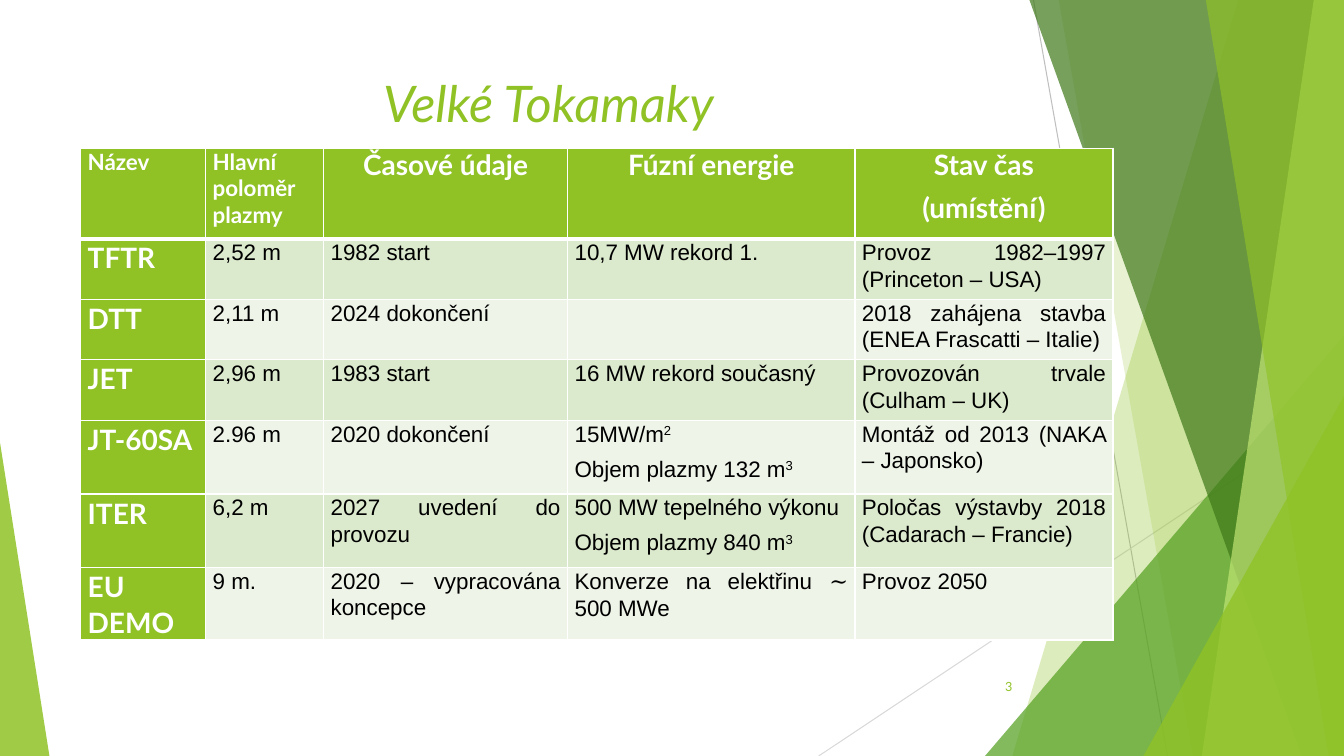
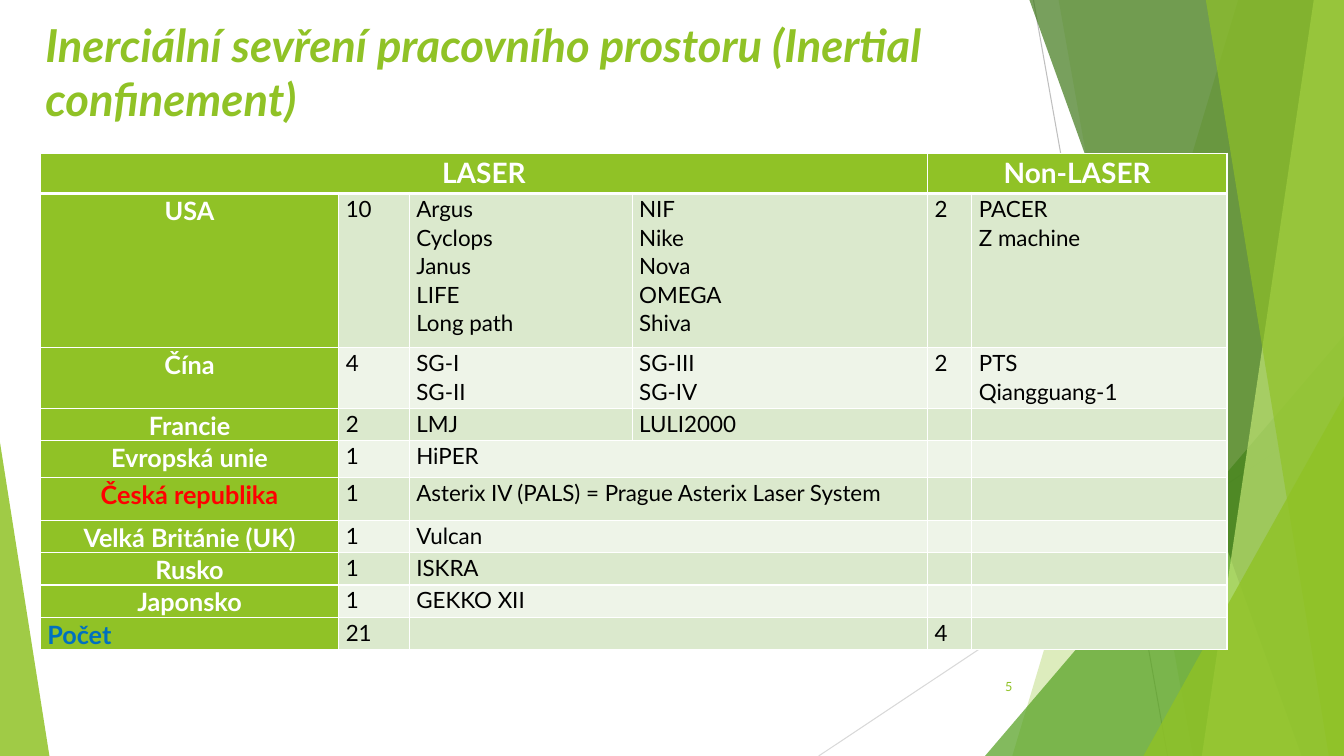
from dataclasses import dataclass

from lxml import etree
from pptx import Presentation
from pptx.dml.color import RGBColor
from pptx.enum.shapes import MSO_CONNECTOR, MSO_SHAPE
from pptx.enum.text import MSO_ANCHOR, MSO_AUTO_SIZE, PP_ALIGN
from pptx.oxml.ns import qn
from pptx.util import Inches, Pt

LEFT, CENTER, RIGHT, JUSTIFY = PP_ALIGN.LEFT, PP_ALIGN.CENTER, PP_ALIGN.RIGHT, PP_ALIGN.JUSTIFY
TOP, MIDDLE = MSO_ANCHOR.TOP, MSO_ANCHOR.MIDDLE
NO_AUTOFIT = MSO_AUTO_SIZE.NONE
STRAIGHT = MSO_CONNECTOR.STRAIGHT
TRIANGLE = MSO_SHAPE.ISOSCELES_TRIANGLE

COLORS = {
    "green": "90C226", "leaf": "54A021", "forest": "3F7819", "lime": "C0E474",
    "band_dark": "DBE9CD", "band_light": "EEF4E8", "white": "FFFFFF", "black": "000000",
    "red": "FF0000", "blue": "0070C0", "ray_dark": "BFBFBF", "ray_light": "D9D9D9",
}
HEADING_FONT, BODY_FONT, SYMBOL_FONT = "Lato", "Arial", "Cambria"
WIDTH, HEIGHT = 13.33, 7.5
TITLE_ONLY = 5

RAYS = [(10.25, 0, 11.58, HEIGHT, "ray_dark"), (WIDTH, 4.03, 8.12, HEIGHT, "ray_light")]
FACETS = [
    ("panel", "green", 30, (12.28, 10.04)),
    ("panel", "green", 20, (10.5, 11.83)),
    ("triangle", "leaf", 72, (9.77, 3.33, 3.56, 1)),
    ("panel", "forest", 70, (10.21, 12.91)),
    ("panel", "lime", 70, (13.03, 11.92)),
    ("panel", "green", 65, (11.96, 13.18)),
    ("triangle", "green", 80, (11.34, 3.93, 1.99, 1)),
    ("triangle", "green", 85, (0, 4.39, 0.49, 0)),
]

TOKAMAKS = [
    ["Název", "Hlavní poloměr plazmy", "Časové údaje", "Fúzní energie", "Stav čas\n(umístění)"],
    ["TFTR", "2,52 m", "1982 start", "10,7 MW rekord 1.", "Provoz 1982–1997 (Princeton – USA)"],
    ["DTT", "2,11 m", "2024 dokončení", "", "2018 zahájena stavba (ENEA Frascatti – Italie)"],
    ["JET", "2,96 m", "1983 start", "16 MW rekord současný", "Provozován trvale (Culham – UK)"],
    ["JT-60SA", "2.96 m", "2020 dokončení", "15MW/m^2\nObjem plazmy 132 m^3",
     "Montáž od 2013 (NAKA – Japonsko)"],
    ["ITER", "6,2 m", "2027 uvedení do provozu",
     "500 MW tepelného výkonu\nObjem plazmy 840 m^3", "Poločas výstavby 2018 (Cadarach – Francie)"],
    ["EU DEMO", "9 m.", "2020 – vypracována koncepce", "Konverze na elektřinu ∼ 500 MWe",
     "Provoz 2050"],
]
LASERS = [
    ["LASER", "", "", "", "Non-LASER", ""],
    ["USA", "10", "Argus\nCyclops\nJanus\nLIFE\nLong path", "NIF\nNike\nNova\nOMEGA\nShiva",
     "2", "PACER\nZ machine"],
    ["Čína", "4", "SG-I\nSG-II", "SG-III\nSG-IV", "2", "PTS\nQiangguang-1"],
    ["Francie", "2", "LMJ", "LULI2000", "", ""],
    ["Evropská unie", "1", "HiPER", "", "", ""],
    ["Česká republika", "1", "Asterix IV (PALS) = Prague Asterix Laser System", "", "", ""],
    ["Velká Británie (UK)", "1", "Vulcan", "", "", ""],
    ["Rusko", "1", "ISKRA", "", "", ""],
    ["Japonsko", "1", "GEKKO XII", "", "", ""],
    ["Počet", "21", "", "", "4", ""],
]
LASER_MERGES = [(0, 0, 3), (0, 4, 5)] + [(row, 2, 3) for row in range(4, len(LASERS))]
LABEL_COLORS = {"Česká republika": "red", "Počet": "blue"}


@dataclass
class CellStyle:
    """Text format of one table cell."""
    size: float = 16
    font: str = HEADING_FONT
    color: str = "black"
    bold: bool = False
    align: int = LEFT
    line_spacing: float = 1.07
    space_after: float = 0


def rgb(name):
    """Return the named colour."""
    return RGBColor.from_string(COLORS[name])


def format_run(run, size, font, color, bold=False, italic=False):
    """Set the character format of a run."""
    run.font.size = Pt(size)
    run.font.name = font
    run.font.color.rgb = rgb(color)
    run.font.bold = bold
    run.font.italic = italic


def add_ray(slide, x1, y1, x2, y2, color):
    """Draw a thin background line."""
    ray = slide.shapes.add_connector(STRAIGHT, Inches(x1), Inches(y1), Inches(x2), Inches(y2))
    ray.line.color.rgb = rgb(color)
    ray.line.width = Pt(0.75)
    etree.SubElement(ray._element.spPr, qn("a:effectLst"))


def add_panel(slide, top_x, bottom_x):
    """Draw a slanted panel reaching to the right edge."""
    builder = slide.shapes.build_freeform(Inches(top_x), 0)
    corners = [(WIDTH, 0), (WIDTH, HEIGHT), (bottom_x, HEIGHT)]
    builder.add_line_segments([(Inches(x), Inches(y)) for x, y in corners], close=True)
    return builder.convert_to_shape()


def add_corner(slide, left, top, width, apex):
    """Draw a triangle standing on the bottom edge."""
    corner = slide.shapes.add_shape(TRIANGLE, Inches(left), Inches(top),
                                    Inches(width), Inches(HEIGHT - top))
    corner.adjustments[0] = apex
    return corner


def add_backdrop(slide):
    """Draw the rays and translucent facets shared by the slides."""
    for ray in RAYS:
        add_ray(slide, *ray)
    draw = {"panel": add_panel, "triangle": add_corner}
    for kind, color, opacity, geometry in FACETS:
        facet = draw[kind](slide, *geometry)
        facet.shadow.inherit = False
        facet.line.fill.background()
        facet.fill.solid()
        facet.fill.fore_color.rgb = rgb(color)
        tint = facet._element.spPr.find(qn("a:solidFill"))[0]
        etree.SubElement(tint, qn("a:alpha"), val=str(opacity * 1000))


def place_title(slide, text, box, size, align, bold):
    """Move and format the title placeholder."""
    title = slide.shapes.title
    title.left, title.top, title.width, title.height = map(Inches, box)
    frame = title.text_frame
    frame.text = text
    frame.word_wrap = True
    frame.auto_size = NO_AUTOFIT
    frame.vertical_anchor = TOP
    frame.paragraphs[0].alignment = align
    format_run(frame.paragraphs[0].runs[0], size, HEADING_FONT, "green", bold, True)


def add_page_number(slide, number):
    """Write the page number at the lower right."""
    frame = slide.shapes.add_textbox(*map(Inches, (9.39, 6.61, 0.75, 0.4))).text_frame
    frame.text = str(number)
    frame.word_wrap = True
    frame.vertical_anchor = MIDDLE
    frame.paragraphs[0].alignment = RIGHT
    format_run(frame.paragraphs[0].runs[0], 9, HEADING_FONT, "green")


def set_borders(cell, row):
    """Give a cell white borders, thick between header and body."""
    heavy = {(0, "B"), (1, "T")}
    for side in "LRTB":
        width = Pt(3 if (row, side) in heavy else 1)
        border = etree.SubElement(cell._tc.get_or_add_tcPr(), qn(f"a:ln{side}"), w=str(width))
        fill = etree.SubElement(border, qn("a:solidFill"))
        etree.SubElement(fill, qn("a:srgbClr"), val=COLORS["white"])


def write_line(paragraph, text, style):
    """Write one paragraph; ^ raises the next part, ∼ takes the symbol font."""
    paragraph.alignment = style.align
    paragraph.line_spacing = style.line_spacing
    paragraph.space_after = Pt(style.space_after)
    for part in text.replace("^", "|^").replace("∼", "|∼|").split("|"):
        run = paragraph.add_run()
        run.text = part.lstrip("^")
        font = SYMBOL_FONT if part == "∼" else style.font
        format_run(run, style.size, font, style.color, style.bold)
        if part.startswith("^"):
            run.font._element.set("baseline", "30000")


def fill_cell(cell, row, column, text, style):
    """Fill, border and write one cell."""
    set_borders(cell, row)
    cell.margin_left = cell.margin_right = Inches(0.07)
    cell.margin_top = cell.margin_bottom = 0
    band = "band_dark" if row % 2 else "band_light"
    cell.fill.solid()
    cell.fill.fore_color.rgb = rgb("green" if row == 0 or column == 0 else band)
    if text:
        frame = cell.text_frame
        frame.text = text
        for paragraph, line in zip(frame.paragraphs, text.split("\n")):
            paragraph.text = ""
            for run in paragraph.runs:
                paragraph._p.remove(run._r)
            write_line(paragraph, line, style)


def add_grid(slide, left, top, widths, heights, rows, style_for, merges=()):
    """Add a table with its upper left corner at left, top."""
    table = slide.shapes.add_table(len(rows), len(widths), Inches(left), Inches(top),
                                   Inches(sum(widths)), Inches(sum(heights))).table
    for column, width in zip(table.columns, widths):
        column.width = Inches(width)
    for line, height in zip(table.rows, heights):
        line.height = Inches(height)
    for row, first, last in merges:
        table.cell(row, first).merge(table.cell(row, last))
    for row, texts in enumerate(rows):
        for column, text in enumerate(texts):
            fill_cell(table.cell(row, column), row, column, text, style_for(row, column, text))


def tokamak_style(row, column, text):
    """Return the cell style of the tokamak table."""
    if row == 0:
        size, align = (16, JUSTIFY) if column < 2 else (20, CENTER)
        return CellStyle(size, HEADING_FONT, "white", True, align, 1.0, 6)
    if column == 0:
        return CellStyle(20, HEADING_FONT, "white", True, JUSTIFY, space_after=6)
    return CellStyle(font=BODY_FONT, align=JUSTIFY, space_after=6)


def laser_style(row, column, text):
    """Return the cell style of the laser table."""
    if row == 0:
        return CellStyle(20, color="white", bold=True, align=CENTER)
    if column == 0:
        return CellStyle(18, color=LABEL_COLORS.get(text, "white"), bold=True,
                         align=LEFT if text == "Počet" else CENTER)
    return CellStyle()


def start_slide(deck, number):
    """Add a slide with the shared backdrop and page number."""
    slide = deck.slides.add_slide(deck.slide_layouts[TITLE_ONLY])
    add_backdrop(slide)
    add_page_number(slide, number)
    return slide


def tokamak_slide(deck):
    """Build the slide on large tokamaks."""
    slide = start_slide(deck, 3)
    place_title(slide, "Velké Tokamaky", (0.74, 0.67, 9.4, 1.44), 36, CENTER, False)
    add_grid(slide, 0.8, 1.47, [1.24, 1.17, 2.42, 2.85, 2.56],
             [0.9, 0.6, 0.6, 0.6, 0.73, 0.73, 0.72], TOKAMAKS, tokamak_style)


def laser_slide(deck):
    """Build the slide on inertial confinement."""
    slide = start_slide(deck, 5)
    place_title(slide, "Inerciální sevření pracovního prostoru (Inertial confinement)",
                (0.35, 0.12, 9.79, 1.1), 32.4, LEFT, True)
    add_grid(slide, 0.4, 1.52, [2.96, 0.7, 2.21, 2.93, 0.44, 2.53],
             [0.4, 1.53, 0.6, 0.32, 0.37, 0.42] + [0.32] * 4, LASERS, laser_style, LASER_MERGES)


def main():
    """Build and save the deck."""
    deck = Presentation()
    deck.slide_width, deck.slide_height = Inches(WIDTH), Inches(HEIGHT)
    tokamak_slide(deck)
    laser_slide(deck)
    deck.save("out.pptx")


if __name__ == "__main__":
    main()
